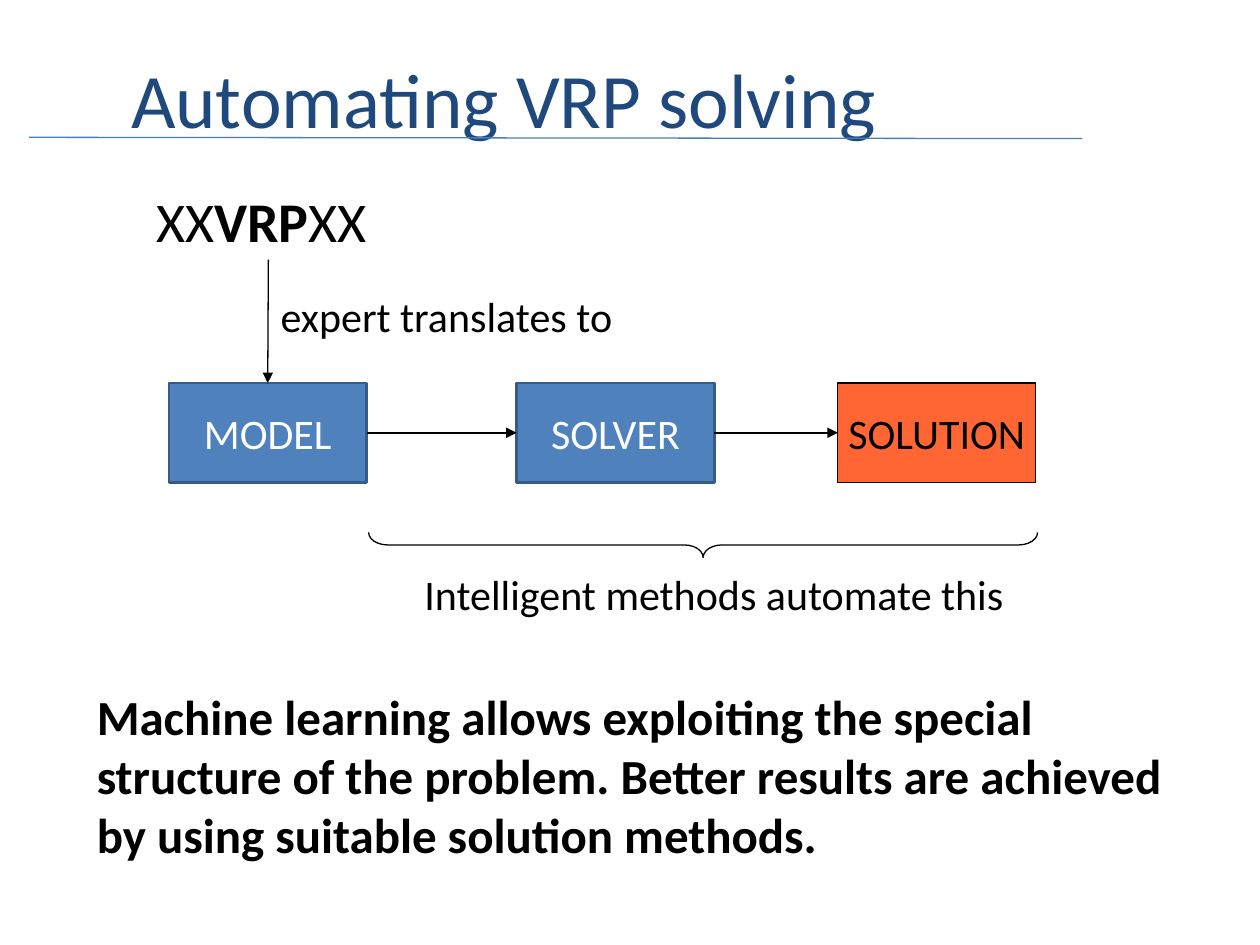
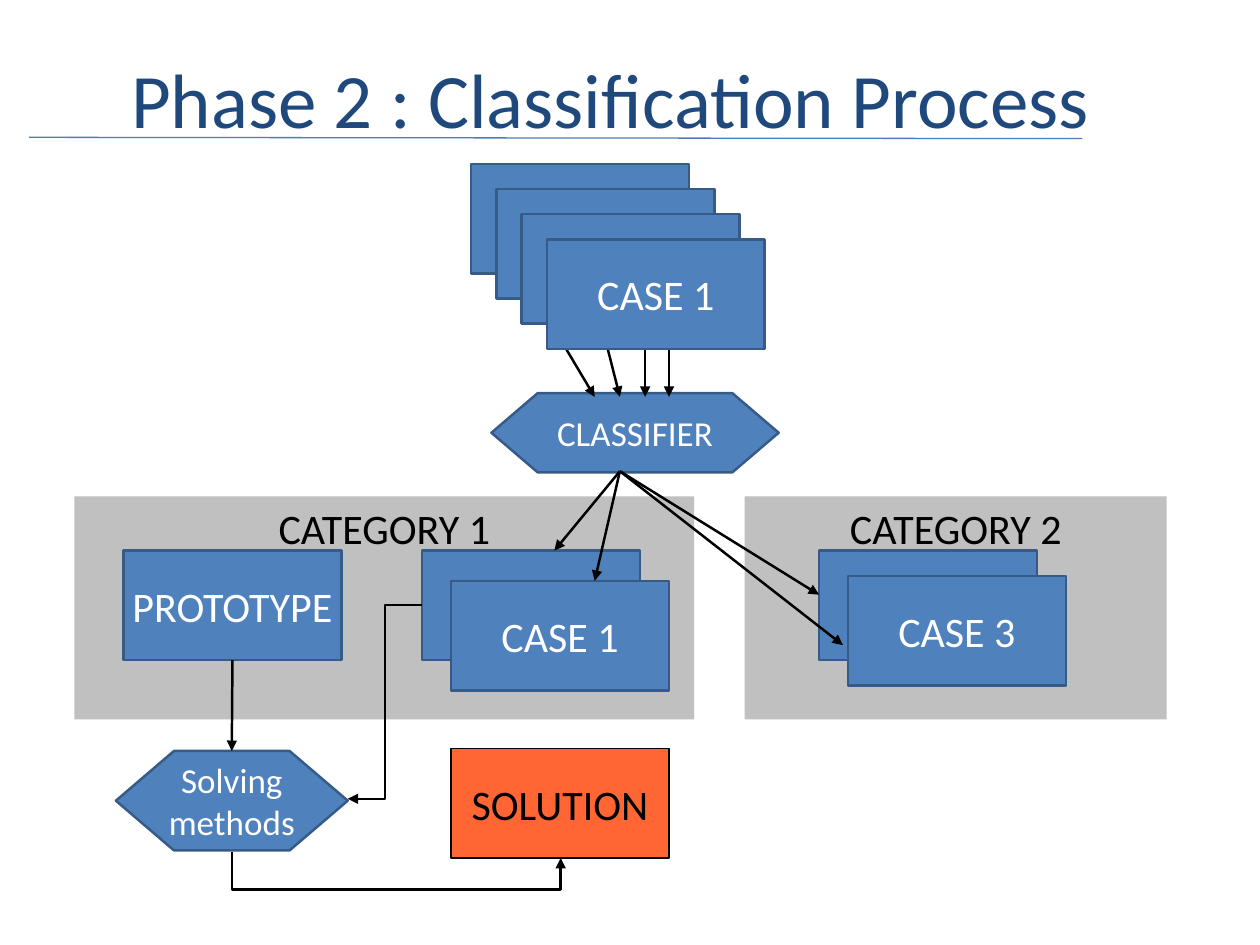
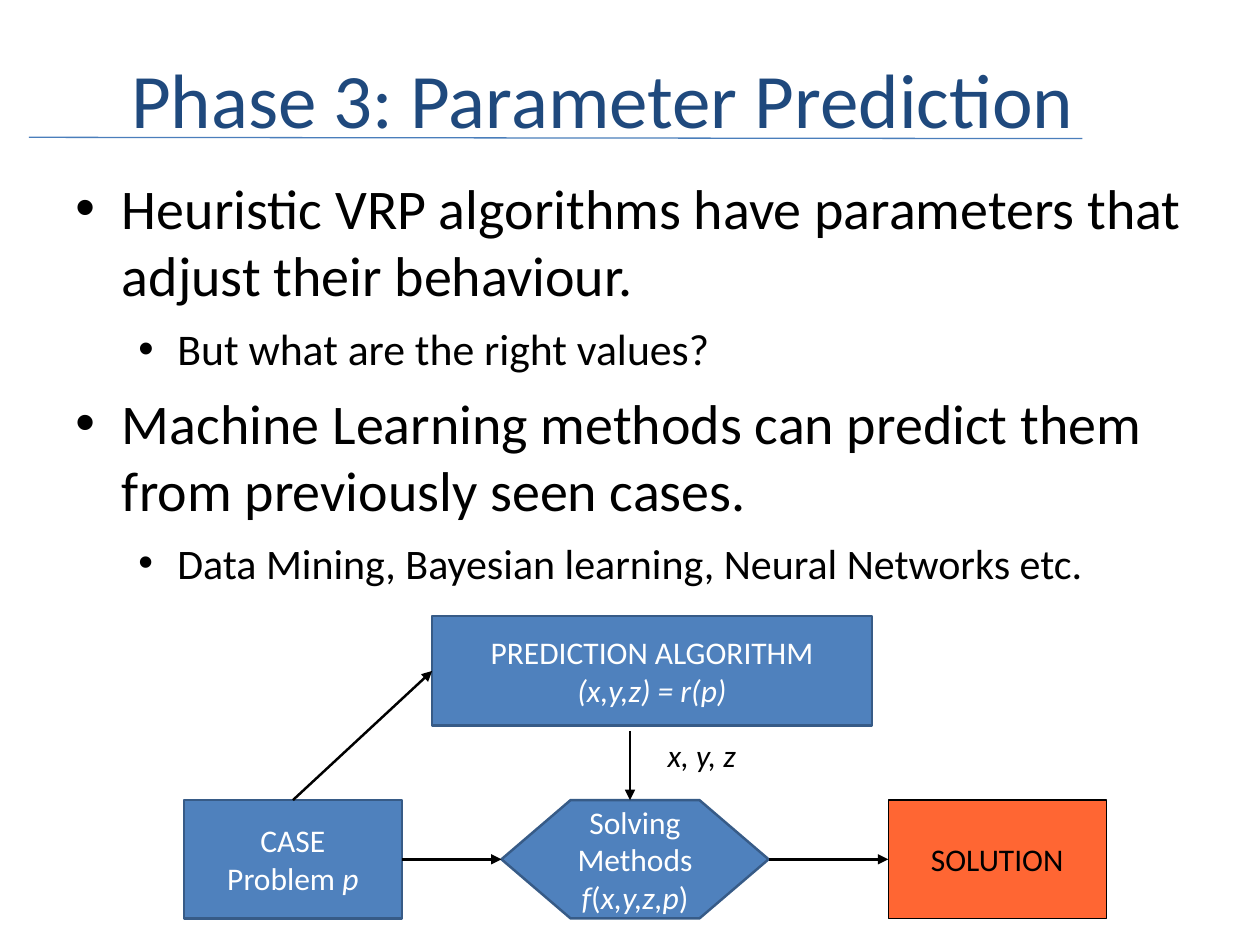
from dataclasses import dataclass
from typing import NamedTuple

from lxml import etree
from pptx import Presentation
from pptx.dml.color import RGBColor
from pptx.enum.shapes import MSO_CONNECTOR, MSO_SHAPE
from pptx.enum.text import MSO_ANCHOR, MSO_AUTO_SIZE, PP_ALIGN
from pptx.oxml.ns import qn
from pptx.util import Inches, Pt

RECT, HEX, BRACE = MSO_SHAPE.RECTANGLE, MSO_SHAPE.HEXAGON, MSO_SHAPE.RIGHT_BRACE
STRAIGHT, ELBOW = MSO_CONNECTOR.STRAIGHT, MSO_CONNECTOR.ELBOW
LEFT, CENTER = PP_ALIGN.LEFT, PP_ALIGN.CENTER
TOP, MIDDLE = MSO_ANCHOR.TOP, MSO_ANCHOR.MIDDLE
NORTH, WEST, SOUTH, EAST = range(4)
TITLE_ONLY = 5


@dataclass(frozen=True)
class Theme:
    font: str = "Calibri"
    title: str = "1F497D"
    rule: str = "4A7EBB"
    ink: str = "000000"
    white: str = "FFFFFF"
    blue: str = "4F81BD"
    edge: str = "375B87"
    orange: str = "FF6633"
    grey: str = "C0C0C0"
    head: int = 44
    lead: int = 32
    strong: int = 28
    sub: int = 25
    body: int = 24
    node: int = 20
    small: int = 18
    thin: float = 0.75
    thick: float = 1.42


T = Theme()


class Look(NamedTuple):
    fill: str
    edge: str | None
    weight: float
    ink: str
    anchor: MSO_ANCHOR = MIDDLE


STEP = Look(T.blue, T.edge, T.thick, T.white)
RESULT = Look(T.orange, T.ink, T.thin, T.ink)
GROUP = Look(T.grey, None, 0, T.ink, TOP)


class Run(NamedTuple):
    text: str
    bold: bool = False
    italic: bool = False


class Point(NamedTuple):
    x: float
    y: float


class Side(NamedTuple):
    """The middle of one side of a rectangle."""
    shape: object
    index: int


class Bullet(NamedTuple):
    text: str
    level: int
    size: int


@dataclass(frozen=True)
class Box:
    x: float
    y: float
    w: float
    h: float
    paras: tuple = ()
    size: int = T.body
    look: Look = STEP
    kind: MSO_SHAPE = RECT


INDENTS = ((0.37, 0.37), (0.81, 0.31))
CARD = (1.73, 0.87)


def rgb(code: str) -> RGBColor:
    return RGBColor.from_string(code)


def write(frame, paras, *, size=T.body, color=T.ink, align=LEFT, anchor=TOP,
          wrap=True, bold=False) -> None:
    """Fill a text frame; a paragraph is a string, a tuple of runs or a bullet."""
    frame.auto_size = MSO_AUTO_SIZE.NONE
    frame.word_wrap = wrap
    frame.vertical_anchor = anchor
    for i, item in enumerate(paras):
        para = frame.paragraphs[0] if i == 0 else frame.add_paragraph()
        para.alignment = align
        points, runs = size, item
        if isinstance(item, Bullet):
            mark(para, item.level)
            if i:
                para.space_before = Pt(8)
            points, runs = item.size, item.text
        if isinstance(runs, str):
            runs = (Run(runs, bold),)
        for part in runs:
            run = para.add_run()
            run.text = part.text
            font = run.font
            font.name, font.size = T.font, Pt(points)
            font.bold, font.italic = part.bold, part.italic
            font.color.rgb = rgb(color)


def mark(para, level: int) -> None:
    """Give a paragraph its bullet and hanging indent."""
    para.level = level
    left, hang = INDENTS[level]
    props = para._p.get_or_add_pPr()
    props.set("marL", str(Inches(left)))
    props.set("indent", str(-Inches(hang)))
    etree.SubElement(props, qn("a:buFont")).set("typeface", "Arial")
    etree.SubElement(props, qn("a:buChar")).set("char", "•")


def note(slide, x: float, y: float, w: float, h: float, paras, **form) -> None:
    box = slide.shapes.add_textbox(Inches(x), Inches(y), Inches(w), Inches(h))
    write(box.text_frame, paras, **form)


def draw(slide, box: Box):
    shape = slide.shapes.add_shape(
        box.kind, Inches(box.x), Inches(box.y), Inches(box.w), Inches(box.h))
    shape.shadow.inherit = False
    shape.fill.solid()
    shape.fill.fore_color.rgb = rgb(box.look.fill)
    if box.look.edge:
        shape.line.color.rgb = rgb(box.look.edge)
        shape.line.width = Pt(box.look.weight)
    else:
        shape.line.fill.background()
    if box.kind == HEX:
        shape.adjustments[0] = 0.584
    write(shape.text_frame, box.paras, size=box.size, color=box.look.ink,
          align=CENTER, anchor=box.look.anchor, wrap=False)
    return shape


def stack(slide, x: float, y: float, dx: float, dy: float, count: int, label: str):
    """Draw overlapping cards with a label on the front one."""
    for i in range(count):
        paras = (label,) if i == count - 1 else ()
        draw(slide, Box(x + i * dx, y + i * dy, *CARD, paras))


def link(slide, start, end, *, kind=STRAIGHT, color=T.ink, weight=T.thick, tip=True):
    """Draw a line between points or sides, gluing it to the sides."""
    ends = []
    for spot in (start, end):
        if isinstance(spot, Side):
            ends += [spot.shape.left, spot.shape.top]
        else:
            ends += [Inches(spot.x), Inches(spot.y)]
    line = slide.shapes.add_connector(kind, *ends)
    if isinstance(start, Side):
        line.begin_connect(start.shape, start.index)
    if isinstance(end, Side):
        line.end_connect(end.shape, end.index)
    line.line.color.rgb = rgb(color)
    line.line.width = Pt(weight)
    props = line.element.spPr
    if tip:
        etree.SubElement(props.find(qn("a:ln")), qn("a:tailEnd")).set("type", "triangle")
    etree.SubElement(props, qn("a:effectLst"))
    return line


def loop(slide, start: Point, end: Point, drop: float) -> None:
    """Draw an elbow that goes down by drop, across, and up to its end."""
    rise, span = end.y - start.y, end.x - start.x
    x, y = (start.x + end.x) / 2, (start.y + end.y) / 2
    line = link(slide, Point(x + rise / 2, y - span / 2),
                Point(x - rise / 2, y + span / 2), kind=ELBOW)
    props = line.element.spPr
    props.find(qn("a:xfrm")).set("rot", str(270 * 60000))
    geom = props.find(qn("a:prstGeom"))
    values = geom.find(qn("a:avLst"))
    if values is None:
        values = etree.SubElement(geom, qn("a:avLst"))
    guide = etree.SubElement(values, qn("a:gd"))
    guide.set("name", "adj1")
    guide.set("fmla", f"val {round(drop / rise * 100000)}")


def start(deck, text: str):
    """Add a slide with its title and the rule below it."""
    slide = deck.slides.add_slide(deck.slide_layouts[TITLE_ONLY])
    link(slide, Point(0.23, 1.09), Point(8.59, 1.1),
         color=T.rule, weight=T.thin, tip=False)
    title = slide.shapes.title
    title.left, title.top = Inches(0.94), Inches(0.3)
    title.width, title.height = Inches(8.98), Inches(0.95)
    write(title.text_frame, (text,), size=T.head, color=T.title, anchor=MIDDLE)
    return slide


def solving(deck) -> None:
    slide = start(deck, "Automating VRP solving")
    note(slide, 1.14, 1.43, 1.88, 0.63,
         ((Run("XX"), Run("VRP", bold=True), Run("XX")),), size=T.lead, wrap=False)
    row = (3.04, 1.57, 0.79)
    model, solver, answer = (
        draw(slide, Box(x, *row, (text,), look=look)) for x, text, look in (
            (1.34, "MODEL", STEP), (4.1, "SOLVER", STEP), (6.65, "SOLUTION", RESULT)))
    link(slide, Point(2.13, 2.06), Side(model, NORTH), weight=T.thin)
    link(slide, Side(model, EAST), Side(solver, WEST))
    link(slide, Side(solver, EAST), Side(answer, WEST))
    note(slide, 2.13, 2.26, 3.06, 0.4, ("expert translates to",))
    brace = slide.shapes.add_shape(
        BRACE, Inches(5.48), Inches(1.67), Inches(0.2), Inches(5.31))
    brace.rotation = 90
    brace.adjustments[0] = 0.75
    brace.shadow.inherit = False
    brace.fill.background()
    brace.line.color.rgb = rgb(T.ink)
    brace.line.width = Pt(T.thin)
    note(slide, 3.27, 4.46, 5.2, 0.7, ("Intelligent methods automate this",))
    note(slide, 0.67, 5.4, 9.06, 1.5, (
        "Machine learning allows exploiting the special structure of the problem. "
        "Better results are achieved by using suitable solution methods.",),
        size=T.strong, bold=True)


def classes(deck) -> None:
    slide = start(deck, "Phase 2 : Classification Process")
    for x, w, text in ((0.59, 4.92, "CATEGORY 1"), (5.91, 3.35, "CATEGORY 2")):
        draw(slide, Box(x, 3.94, w, 1.77, (text,), look=GROUP))
    draw(slide, Box(3.9, 3.12, 2.28, 0.63, ("CLASSIFIER",), T.node, kind=HEX))
    for x, y, tip in ((4.13, 2.16, 4.72), (4.72, 2.36, 4.92),
                      (5.12, 2.76, 5.12), (5.31, 2.76, 5.31)):
        link(slide, Point(x, y), Point(tip, 3.15))
    stack(slide, 3.74, 1.3, 0.2, 0.2, 4, "CASE 1")
    stack(slide, 3.35, 4.37, 0.23, 0.24, 2, "CASE 1")
    stack(slide, 6.5, 4.37, 0.23, 0.2, 2, "CASE 3")
    for x, y in ((4.4, 4.37), (4.72, 4.61), (6.69, 5.12), (6.5, 4.72)):
        link(slide, Point(4.92, 3.74), Point(x, y))
    proto = draw(slide, Box(0.98, 4.37, *CARD, ("PROTOTYPE",)))
    draw(slide, Box(0.92, 5.96, 1.84, 0.79, ("Solving", "methods"), T.node, kind=HEX))
    draw(slide, Box(3.58, 5.94, *CARD, ("SOLUTION",), look=RESULT))
    link(slide, Side(proto, SOUTH), Point(1.84, 5.96))
    link(slide, Point(3.35, 4.8), Point(2.76, 6.34), kind=ELBOW)
    loop(slide, Point(1.84, 6.76), Point(4.45, 6.81), 0.3)


def tuning(deck) -> None:
    slide = start(deck, "Phase 3: Parameter Prediction")
    note(slide, 0.5, 1.33, 9, 3.5, (
        Bullet("Heuristic VRP algorithms have parameters that adjust their behaviour.",
               0, T.lead),
        Bullet("But what are the right values?", 1, T.sub),
        Bullet("Machine Learning methods can predict them from previously seen cases.",
               0, T.lead),
        Bullet("Data Mining, Bayesian learning, Neural Networks etc.", 1, T.body)))
    guess = draw(slide, Box(3.43, 4.89, 3.49, 0.87, (
        "PREDICTION ALGORITHM", (Run("(x,y,z) = r(p)", italic=True),)), T.small))
    case = draw(slide, Box(1.46, 6.35, 1.73, 0.94, (
        "CASE", (Run("Problem "), Run("p", italic=True))), T.small))
    draw(slide, Box(3.98, 6.35, 2.12, 0.94, (
        "Solving", "Methods",
        (Run("f", italic=True), Run("("), Run("x,y,z,p", italic=True), Run(")"))),
        T.small, kind=HEX))
    answer = draw(slide, Box(7.05, 6.35, 1.73, 0.94, ("SOLUTION",), T.small, RESULT))
    link(slide, Side(case, NORTH), Side(guess, WEST))
    link(slide, Side(case, EAST), Point(3.98, 6.82))
    link(slide, Point(6.1, 6.82), Side(answer, WEST))
    link(slide, Point(5, 5.8), Point(5, 6.35))
    note(slide, 5.2, 5.79, 0.75, 0.4, ((Run("x, y, z", italic=True),),),
         size=T.small, wrap=False)


def main() -> None:
    deck = Presentation()
    deck.slide_width, deck.slide_height = Inches(10), Inches(7.5)
    for build in (solving, classes, tuning):
        build(deck)
    deck.save("out.pptx")


if __name__ == "__main__":
    main()
